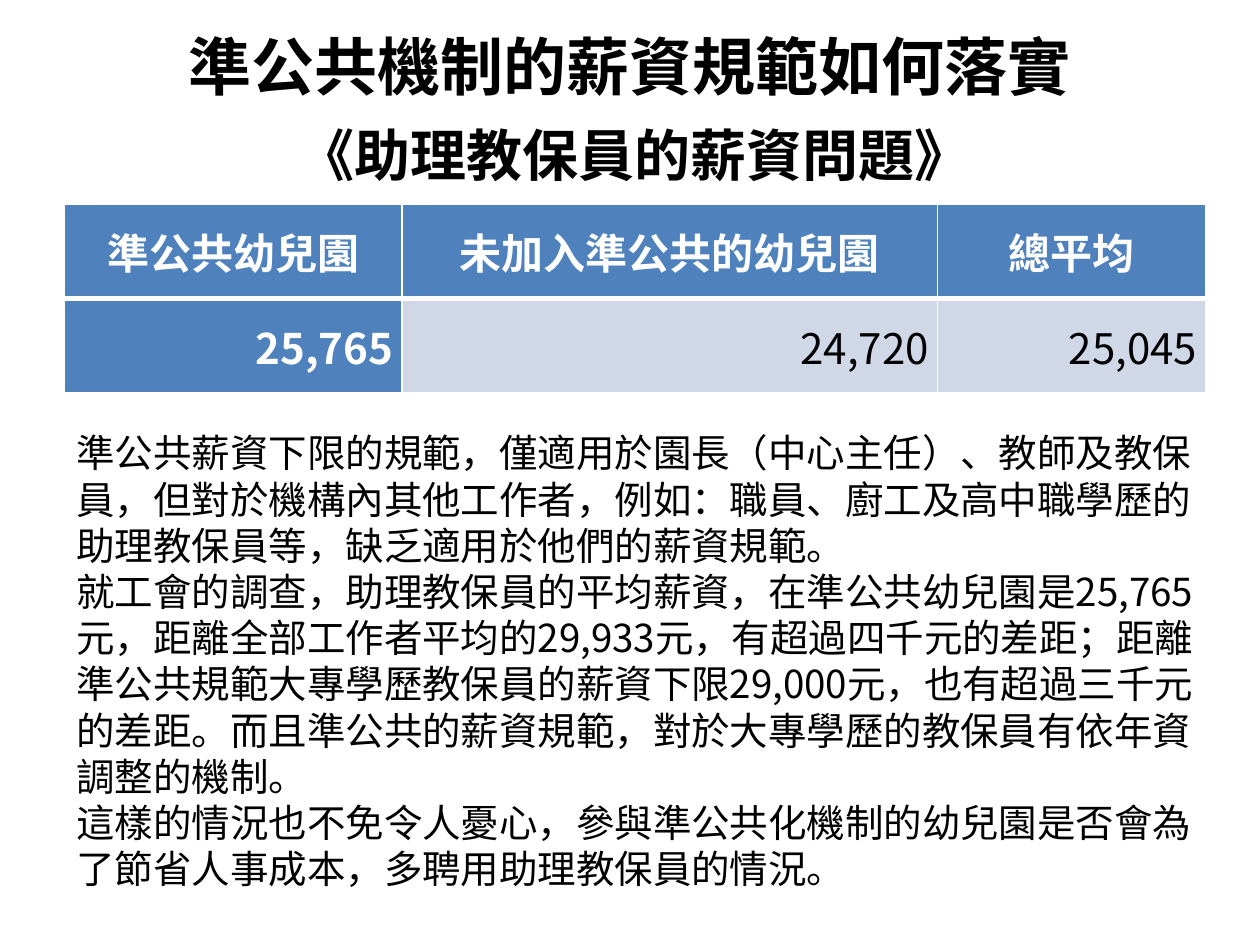
from dataclasses import dataclass

from lxml import etree
from pptx import Presentation
from pptx.dml.color import RGBColor
from pptx.enum.shapes import MSO_SHAPE
from pptx.enum.text import MSO_ANCHOR, PP_ALIGN
from pptx.oxml.ns import qn
from pptx.util import Inches, Pt

RECTANGLE = MSO_SHAPE.RECTANGLE
TOP, MIDDLE = MSO_ANCHOR.TOP, MSO_ANCHOR.MIDDLE
LEFT, CENTER, RIGHT = PP_ALIGN.LEFT, PP_ALIGN.CENTER, PP_ALIGN.RIGHT


@dataclass(frozen=True)
class Theme:
    font: str = "Noto Sans CJK SC"
    white: str = "FFFFFF"
    ink: str = "000000"
    accent: str = "4F81BD"
    pale: str = "D0D8E8"
    title: int = 36
    subtitle: int = 32
    table: int = 24
    body: int = 22
    thin: int = 1
    thick: int = 3


THEME = Theme()
SLIDE_WIDTH, SLIDE_HEIGHT = 10, 7.5
MARGIN = 0.51
COLUMN_WIDTHS = (2.68, 4.25, 2.13)
ROW_HEIGHT = SLIDE_HEIGHT / 10

SALARIES = (
    ("準公共幼兒園", "未加入準公共的幼兒園", "總平均"),
    ("25,765", "24,720", "25,045"),
)
DISCUSSION = (
    "準公共薪資下限的規範，僅適用於園長（中心主任）、教師及教保員，但對於機構內其他工作者，"
    "例如：職員、廚工及高中職學歷的助理教保員等，缺乏適用於他們的薪資規範。",
    "就工會的調查，助理教保員的平均薪資，在準公共幼兒園是25,765元，距離全部工作者平均的29,933元，"
    "有超過四千元的差距；距離準公共規範大專學歷教保員的薪資下限29,000元，也有超過三千元的差距。"
    "而且準公共的薪資規範，對於大專學歷的教保員有依年資調整的機制。",
    "這樣的情況也不免令人憂心，參與準公共化機制的幼兒園是否會為了節省人事成本，"
    "多聘用助理教保員的情況。",
)


def rgb(color):
    return RGBColor.from_string(color)


def style_paragraph(paragraph, size, color, bold, align):
    """Style a paragraph, naming the font for East Asian text as well."""
    paragraph.alignment = align
    font = paragraph.font
    font.size, font.bold, font.name = Pt(size), bold, THEME.font
    font.color.rgb = rgb(color)
    properties = paragraph._p.pPr.find(qn("a:defRPr"))
    etree.SubElement(properties, qn("a:ea"), typeface=THEME.font)


def add_backdrop(slide):
    backdrop = slide.shapes.add_shape(
        RECTANGLE, 0, 0, Inches(SLIDE_WIDTH), Inches(SLIDE_HEIGHT))
    backdrop.shadow.inherit = False
    backdrop.fill.solid()
    backdrop.fill.fore_color.rgb = rgb(THEME.white)
    backdrop.line.color.rgb = rgb(THEME.white)
    backdrop.line.width = Pt(2)


def add_text(slide, bounds, paragraphs, size, bold=False, align=LEFT, anchor=TOP):
    box = slide.shapes.add_textbox(*map(Inches, bounds))
    frame = box.text_frame
    frame.word_wrap = True
    frame.vertical_anchor = anchor
    frame.text = "\n".join(paragraphs)
    for paragraph in frame.paragraphs:
        style_paragraph(paragraph, size, THEME.ink, bold, align)


def add_borders(cell, top, bottom):
    """Draw white cell borders; the side ones are always thin."""
    widths = {"lnL": THEME.thin, "lnR": THEME.thin, "lnT": top, "lnB": bottom}
    for side, width in widths.items():
        line = etree.SubElement(
            cell._tc.get_or_add_tcPr(), qn(f"a:{side}"), w=str(Pt(width)))
        fill = etree.SubElement(line, qn("a:solidFill"))
        etree.SubElement(fill, qn("a:srgbClr"), val=THEME.white)


def fill_cell(cell, text, is_header, is_highlight):
    cell.text = text
    cell.vertical_anchor = MIDDLE
    cell.margin_left = cell.margin_right = Inches(0.07)
    cell.margin_top = cell.margin_bottom = 0
    add_borders(cell,
                top=THEME.thin if is_header else THEME.thick,
                bottom=THEME.thick if is_header else THEME.thin)
    cell.fill.solid()
    cell.fill.fore_color.rgb = rgb(THEME.accent if is_highlight else THEME.pale)
    style_paragraph(cell.text_frame.paragraphs[0], THEME.table,
                    THEME.white if is_highlight else THEME.ink,
                    is_highlight, CENTER if is_header else RIGHT)


def add_salary_table(slide, top):
    size = sum(COLUMN_WIDTHS), ROW_HEIGHT * len(SALARIES)
    table = slide.shapes.add_table(
        len(SALARIES), len(COLUMN_WIDTHS),
        *map(Inches, (MARGIN, top, *size))).table
    table.first_col = True
    for column, width in zip(table.columns, COLUMN_WIDTHS):
        column.width = Inches(width)
    for row, values in enumerate(SALARIES):
        for column, value in enumerate(values):
            fill_cell(table.cell(row, column), value,
                      is_header=row == 0, is_highlight=row == 0 or column == 0)


def main():
    deck = Presentation()
    deck.slide_width, deck.slide_height = Inches(SLIDE_WIDTH), Inches(SLIDE_HEIGHT)
    slide = deck.slides.add_slide(deck.slide_layouts[6])

    add_backdrop(slide)
    add_text(slide, (0.5, 0.13, 9, 0.77), ["準公共機制的薪資規範如何落實"],
             THEME.title, bold=True, align=CENTER, anchor=MIDDLE)
    add_text(slide, (1.93, 0.91, 6.22, 0.64), ["《助理教保員的薪資問題》"],
             THEME.subtitle, bold=True, align=CENTER)
    add_salary_table(slide, top=1.62)
    add_text(slide, (MARGIN, 3.36, 9.13, 3.8), DISCUSSION, THEME.body)

    deck.save("out.pptx")


if __name__ == "__main__":
    main()
